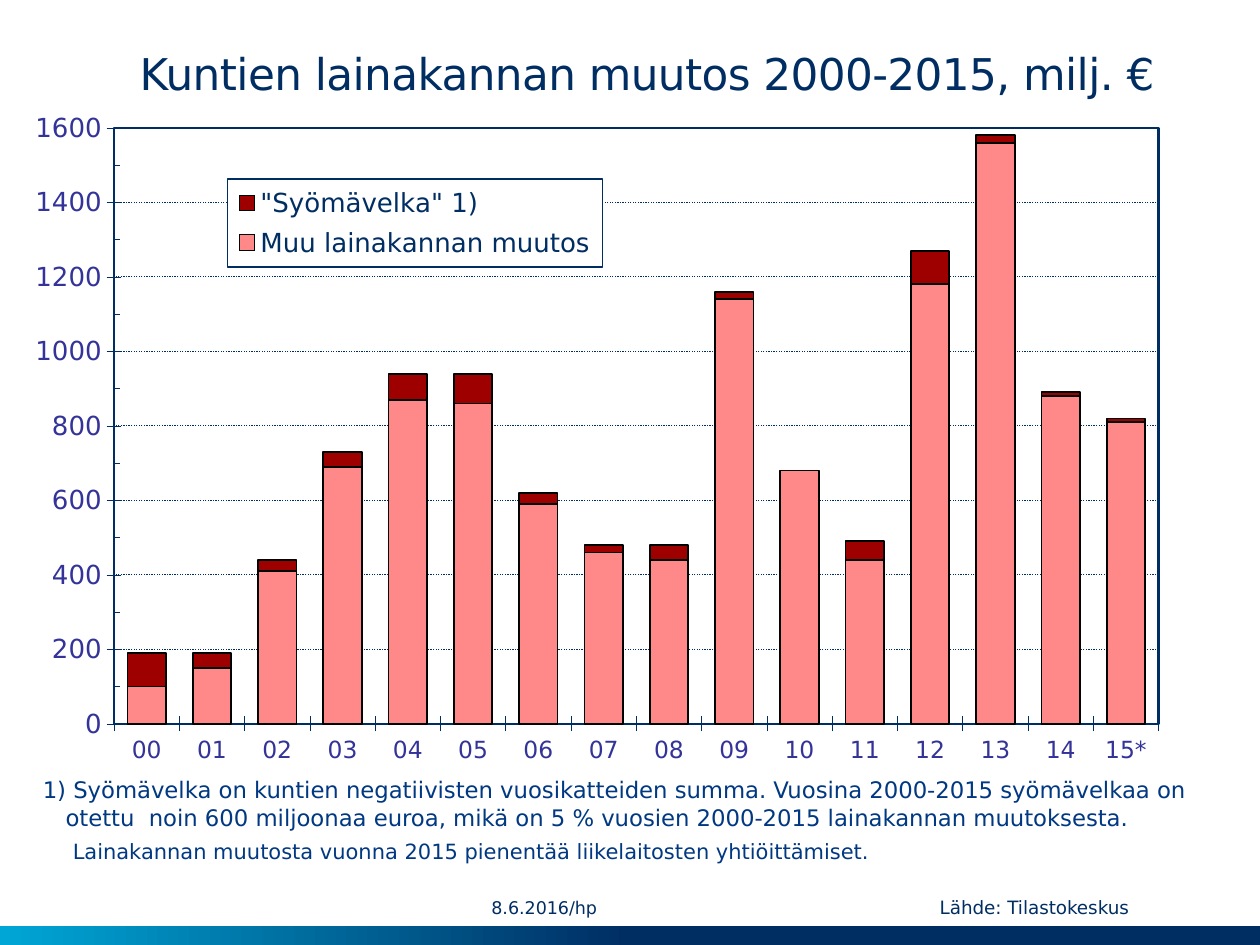
import pptx
import pptx.chart.data
import pptx.dml.color
import pptx.enum.chart
import pptx.enum.dml
import pptx.enum.shapes
import pptx.enum.text
import pptx.oxml
import pptx.oxml.ns
import pptx.util

Pt = pptx.util.Pt
RGB = pptx.dml.color.RGBColor.from_string
qn = pptx.oxml.ns.qn
FONT = "DejaVu Sans"
COLORS = {"navy": "002E63", "cyan": "00A6D6", "axis": "333399", "note": "003882",
          "pink": "FF8989", "dark_red": "9E0000", "black": "000000"}


def style(font, size, color):
    font.name = FONT
    font.size = Pt(size)
    font.bold = False
    font.color.rgb = RGB(COLORS[color])


def chart_xml(body):
    return pptx.oxml.parse_xml(
        '<c:%s xmlns:c="http://schemas.openxmlformats.org/drawingml/2006/chart" '
        'xmlns:a="http://schemas.openxmlformats.org/drawingml/2006/main">%s</c:%s>'
        % (body[0], body[1], body[0]))


deck = pptx.Presentation()
deck.slide_width, deck.slide_height = Pt(720), Pt(540)
page = deck.slides.add_slide(deck.slide_layouts[5])

band = page.shapes.add_shape(pptx.enum.shapes.MSO_SHAPE.RECTANGLE, 0, Pt(529.2), Pt(720), Pt(10.8))
band.shadow.inherit = False
band.line.fill.background()
band.fill.gradient()
band.fill.gradient_angle = 180
for stop, position, color in zip(band.fill.gradient_stops, (0.5, 1), ("navy", "cyan")):
    stop.position = position
    stop.color.rgb = RGB(COLORS[color])

title = page.shapes.title
title.left, title.top, title.width, title.height = Pt(31), Pt(14.4), Pt(677.5), Pt(46)
frame = title.text_frame
frame.text = "Kuntien lainakannan muutos 2000-2015, milj. €"
frame.word_wrap = True
frame.auto_size = pptx.enum.text.MSO_AUTO_SIZE.NONE
frame.vertical_anchor = pptx.enum.text.MSO_ANCHOR.BOTTOM
frame.margin_left = frame.margin_right = 0
frame.paragraphs[0].alignment = pptx.enum.text.PP_ALIGN.CENTER
title_span = frame.paragraphs[0].runs[0]
style(title_span.font, 25, "navy")
title_span.font._element.set("spc", "-30")

data = pptx.chart.data.CategoryChartData(number_format="0")
data.categories = ["%02d" % year for year in range(15)] + ["15*"]
data.add_series("Muu lainakannan muutos", [100, 150, 410, 690, 870, 860, 590, 460,
                                           440, 1140, 680, 440, 1180, 1560, 880, 810])
data.add_series('"Syömävelka" 1)', [90, 40, 30, 40, 70, 80, 30, 20,
                                    40, 20, 0, 50, 90, 20, 10, 10])
chart = page.shapes.add_chart(pptx.enum.chart.XL_CHART_TYPE.COLUMN_STACKED,
                              Pt(20.2), Pt(60.5), Pt(679), Pt(380.2), data).chart
chart.has_title = False
style(chart.font, 15, "navy")
plot = chart.plots[0]
plot.gap_width, plot.overlap = 70, 100
plot.vary_by_categories = False
for series, color in zip(plot.series, ("pink", "dark_red")):
    series.format.fill.solid()
    series.format.fill.fore_color.rgb = RGB(COLORS[color])
    series.format.line.color.rgb = RGB(COLORS["black"])
    series.format.line.width = Pt(1)

TICK = pptx.enum.chart.XL_TICK_MARK
years, amounts = chart.category_axis, chart.value_axis
for axis, size in ((years, 13.5), (amounts, 15)):
    axis.major_tick_mark = TICK.CROSS
    style(axis.tick_labels.font, size, "axis")
    axis.format.line.color.rgb = RGB(COLORS["navy"])
    axis.format.line.width = Pt(0.31)
amounts.minor_tick_mark = TICK.INSIDE
amounts.minimum_scale, amounts.maximum_scale = 0, 1600
amounts.major_unit, amounts.minor_unit = 200, 100
amounts.tick_labels.number_format = "0"
amounts.tick_labels.number_format_is_linked = False
grid = amounts.major_gridlines.format.line
grid.color.rgb = RGB(COLORS["navy"])
grid.width = Pt(0.75)
grid.dash_style = pptx.enum.dml.MSO_LINE.ROUND_DOT

chart.has_legend = True
legend = chart.legend
legend.position = pptx.enum.chart.XL_LEGEND_POSITION.RIGHT
legend.include_in_layout = False
style(legend.font, 15, "navy")

plot_area = chart._chartSpace.chart.plotArea
legend_box = legend._element
areas = ((plot_area, '<c:layoutTarget val="inner"/>', (0.059, 0.033, 0.886, 0.896), 1.5),
         (legend_box, "", (0.155, 0.11, 0.318, 0.132), 0.75))
for area, target, bounds, width in areas:
    for old in area.findall(qn("c:layout")):
        area.remove(old)
    modes = "".join('<c:%sMode val="edge"/>' % side for side in "xy")
    sizes = "".join('<c:%s val="%s"/>' % pair for pair in zip("xywh", bounds))
    layout = chart_xml(("layout", "<c:manualLayout>%s%s%s</c:manualLayout>" % (target, modes, sizes)))
    fill = "<a:noFill/>" if target else '<a:solidFill><a:srgbClr val="FFFFFF"/></a:solidFill>'
    border = chart_xml(("spPr", '%s<a:ln w="%d"><a:solidFill><a:srgbClr val="%s"/></a:solidFill></a:ln>'
                        % (fill, Pt(width), COLORS["navy"])))
    if target:
        area.insert(0, layout)
        area.append(border)
    else:
        area.find(qn("c:legendPos")).addnext(layout)
        area.find(qn("c:overlay")).addnext(border)

footnote = ["1) Syömävelka on kuntien negatiivisten vuosikatteiden summa. Vuosina 2000-2015 syömävelkaa on",
            "otettu  noin 600 miljoonaa euroa, mikä on 5 % vuosien 2000-2015 lainakannan muutoksesta."]
texts = [
    (14.4, 440, 693.4, 39, footnote, (3, 16), 13, "note"),
    (280.8, 509, 130.3, 19.4, ["8.6.2016/hp"], (0,), 10, "navy"),
    (529.9, 508.3, 181.4, 20.2, ["Lähde: Tilastokeskus"], (0,), 10.5, "navy"),
    (31, 475.9, 635, 21.6, ["Lainakannan muutosta vuonna 2015 pienentää liikelaitosten yhtiöittämiset."],
     (3.5,), 12, "note"),
]
for left, top, width, height, lines, indents, size, color in texts:
    box = page.shapes.add_textbox(Pt(left), Pt(top), Pt(width), Pt(height))
    frame = box.text_frame
    frame.word_wrap = True
    frame.text = "\n".join(lines)
    if size == 10:
        frame.margin_left = frame.margin_right = frame.margin_top = frame.margin_bottom = 0
        frame.vertical_anchor = pptx.enum.text.MSO_ANCHOR.MIDDLE
    for para, indent in zip(frame.paragraphs, indents):
        para._p.get_or_add_pPr().set("marL", str(Pt(indent)))
        style(para.runs[0].font, size, color)

deck.save("out.pptx")
